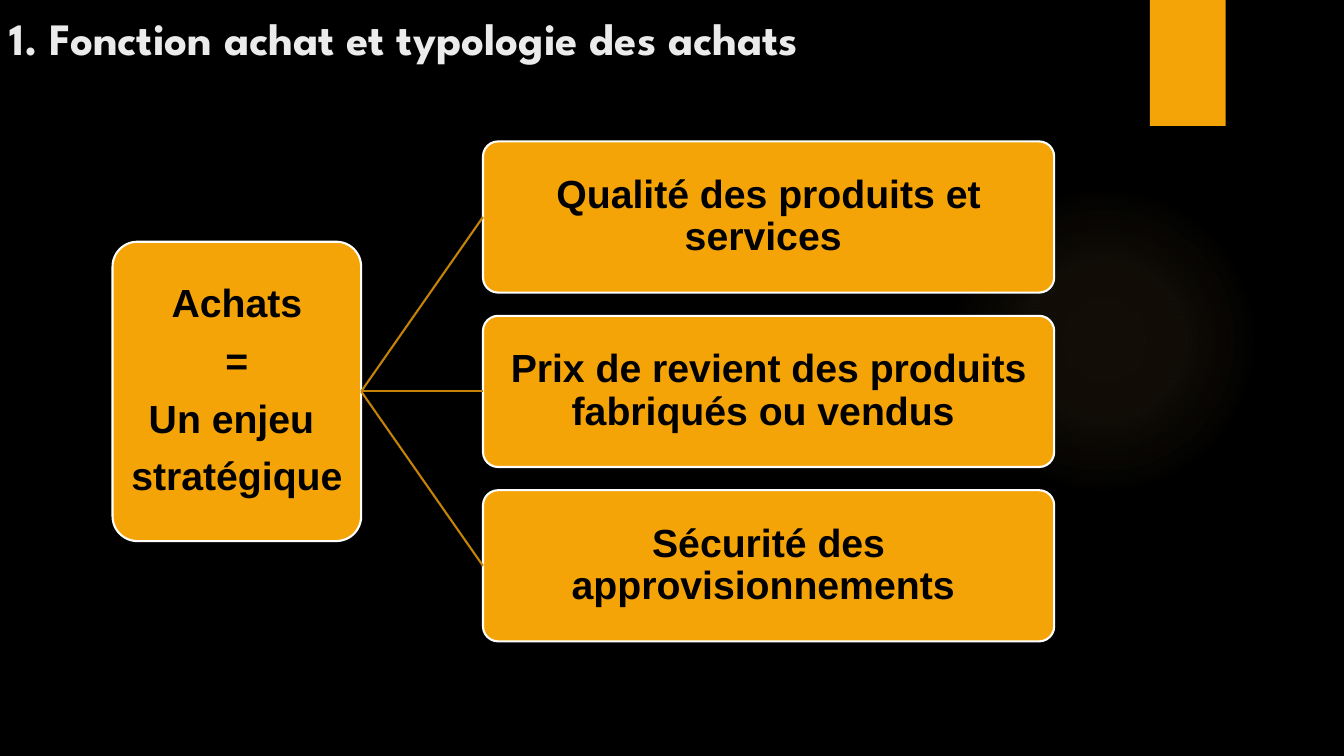
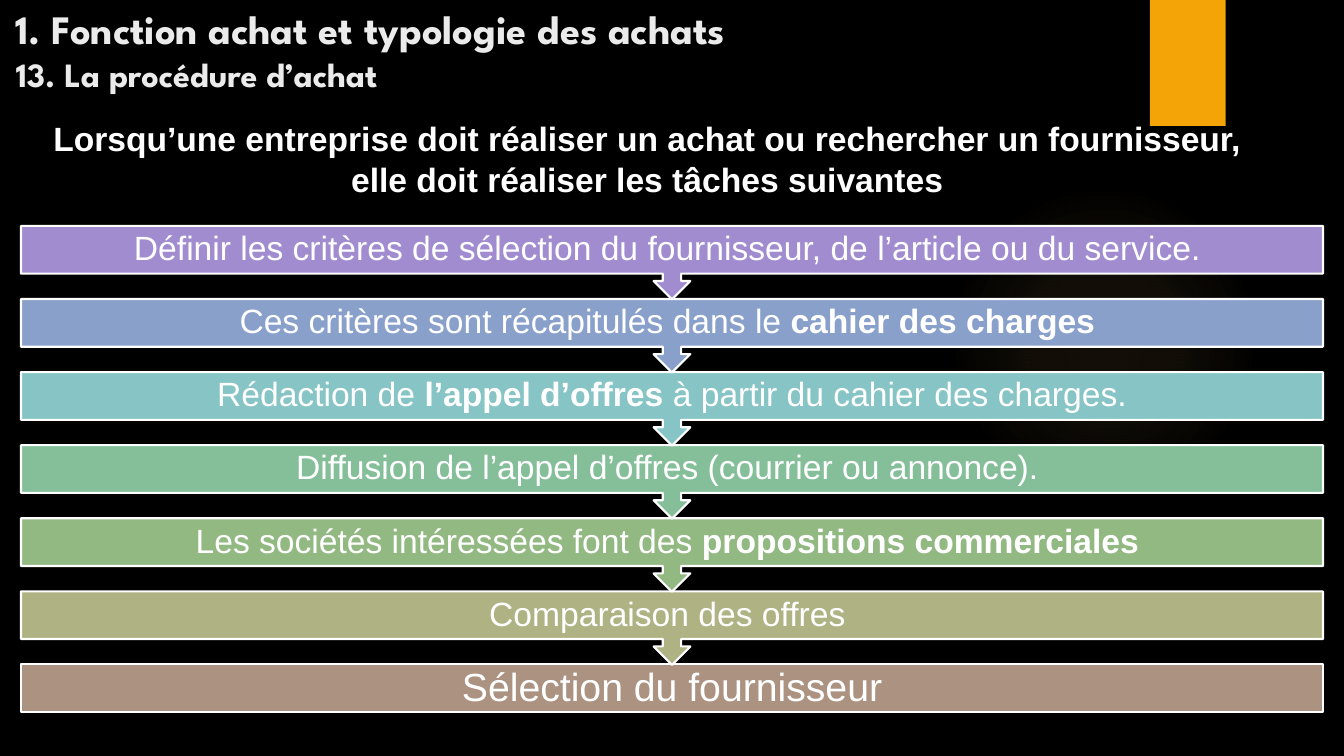
import pptx
import pptx.dml.color
import pptx.enum.shapes
import pptx.enum.text
import pptx.oxml
import pptx.oxml.ns
import pptx.util

COLUMNS, ROWS = 160, 90
COLORS = {
    "background": "000000", "accent": "F5A408", "glow": "FAC96A", "link": "C48306",
    "title": "EBEBEB", "light": "FFFFFF", "dark": "000000",
    "violet": "A18CD0", "blue": "89A0CB", "cyan": "87C4C5", "green": "85BF9A",
    "leaf": "93B983", "olive": "AFB282", "brown": "AB9281",
}
TITLE_FONT, BODY_FONT = "League Spartan", "Arial"
SHAPES = pptx.enum.shapes.MSO_SHAPE
ANCHORS = pptx.enum.text.MSO_ANCHOR
ALIGNMENTS = pptx.enum.text.PP_ALIGN


def color(name):
    return pptx.dml.color.RGBColor.from_string(COLORS[name])


def write_text(frame, paragraphs, size=24, font=BODY_FONT, ink="light", bold=False,
               align=ALIGNMENTS.CENTER, anchor=ANCHORS.MIDDLE, line_spacing=None,
               gap=0, insets=(0.1, 0.05)):
    """Fill a frame; each paragraph is a string or a list of (text, format) runs."""
    frame.word_wrap = True
    frame.vertical_anchor = anchor
    frame.margin_left = frame.margin_right = pptx.util.Inches(insets[0])
    frame.margin_top = frame.margin_bottom = pptx.util.Inches(insets[1])
    for index, runs in enumerate(paragraphs):
        paragraph = frame.add_paragraph() if index else frame.paragraphs[0]
        paragraph.alignment = align
        paragraph.line_spacing = line_spacing
        if index:
            paragraph.space_before = pptx.util.Pt(gap)
        for text, changes in [(runs, {})] if isinstance(runs, str) else runs:
            run = paragraph.add_run()
            run.text = text
            run.font.name = font
            run.font.size = pptx.util.Pt(changes.get("size", size))
            run.font.bold = changes.get("bold", bold)
            run.font.color.rgb = color(ink)


class Deck:
    """Holds the shared style and the current slide; lengths are grid units."""

    def __init__(self):
        self.presentation = pptx.Presentation()
        self.presentation.slide_width = pptx.util.Inches(13.33)
        self.presentation.slide_height = pptx.util.Inches(7.5)
        self.slide = None

    def place(self, left, top, width, height):
        column = self.presentation.slide_width / COLUMNS
        row = self.presentation.slide_height / ROWS
        return [round(value) for value in
                (left * column, top * row, width * column, height * row)]

    def add_slide(self):
        self.slide = self.presentation.slides.add_slide(self.presentation.slide_layouts[6])
        fill = self.slide.background.fill
        fill.solid()
        fill.fore_color.rgb = color("background")
        self.glow(112.9, 22, 37)
        self.box(SHAPES.RECTANGLE, 136.9, 0, 9, 15, outline=None)

    def box(self, kind, left, top, width, height, fill="accent", outline="light"):
        shape = self.slide.shapes.add_shape(kind, *self.place(left, top, width, height))
        shape.shadow.inherit = False
        shape.fill.solid()
        shape.fill.fore_color.rgb = color(fill)
        if outline:
            shape.line.color.rgb = color(outline)
            shape.line.width = pptx.util.Pt(1.5)
        else:
            shape.line.fill.background()
        return shape

    def glow(self, left, top, size):
        shape = self.box(SHAPES.OVAL, left, top, size, size, "glow", None)
        # Radial gradient fading to transparent (position and opacity in percent)
        stops = "".join(
            f'<a:gs pos="{position * 1000}"><a:srgbClr val="{COLORS["glow"]}">'
            f'<a:alpha val="{opacity * 1000}"/></a:srgbClr></a:gs>'
            for position, opacity in ((0, 7), (36, 6), (69, 0)))
        gradient = pptx.oxml.parse_xml(
            f'<a:gradFill {pptx.oxml.ns.nsdecls("a")}><a:gsLst>{stops}</a:gsLst>'
            '<a:path path="circle"><a:fillToRect l="50000" t="50000" r="50000" b="50000"/>'
            '</a:path></a:gradFill>')
        properties = shape.element.spPr
        properties.replace(properties.find(pptx.oxml.ns.qn("a:solidFill")), gradient)

    def text(self, left, top, width, height, paragraphs, **style):
        shape = self.slide.shapes.add_textbox(*self.place(left, top, width, height))
        write_text(shape.text_frame, paragraphs, **style)

    def title(self, left, height, paragraphs, size):
        self.text(left, 0, 115.8, height, paragraphs, size=size, font=TITLE_FONT,
                  ink="title", bold=True, align=ALIGNMENTS.LEFT, anchor=ANCHORS.BOTTOM)

    def card(self, left, middle, width, height, paragraphs):
        shape = self.box(SHAPES.ROUNDED_RECTANGLE, left, middle - height / 2, width, height)
        shape.adjustments[0] = 0.1
        write_text(shape.text_frame, paragraphs, size=28, ink="dark", bold=True,
                   line_spacing=0.9, gap=11, insets=(0.02, 0.02))
        return shape

    def link(self, start, end):
        line = self.slide.shapes.add_connector(
            pptx.enum.shapes.MSO_CONNECTOR.STRAIGHT, 0, 0, 0, 0)
        line.begin_connect(start, 3)
        line.end_connect(end, 1)
        line.line.color.rgb = color("link")
        line.line.width = pptx.util.Pt(1.5)
        line.element.spPr.append(
            pptx.oxml.parse_xml(f'<a:effectLst {pptx.oxml.ns.nsdecls("a")}/>'))

    def step(self, top, paragraph, fill, last=False):
        kind = SHAPES.RECTANGLE if last else SHAPES.DOWN_ARROW_CALLOUT
        shape = self.box(kind, 2.5, top, 155, 5.7 if last else 8.75, fill)
        write_text(shape.text_frame, [paragraph], size=28 if last else 24,
                   line_spacing=0.9, insets=(0.19, 0))


def build_stakes(deck):
    deck.add_slide()
    deck.title(0, 8.3, ["1. Fonction achat et typologie des achats"], 32)
    # Root card joined to three stakes
    middle, pitch = 46.6, 20.76
    root = deck.card(13.4, middle, 29.6, 35.64,
                     ["Achats", "=", "Un enjeu ", "stratégique"])
    stakes = ["Qualité des produits et services ",
              "Prix de revient des produits fabriqués ou vendus ",
              "Sécurité des approvisionnements "]
    for index, stake in enumerate(stakes):
        deck.link(root, deck.card(57.5, middle + (index - 1) * pitch, 68, 18, [stake]))


def build_procedure(deck):
    deck.add_slide()
    deck.title(0.7, 11.76, ["1. Fonction achat et typologie des achats",
                            [("13. La procédure d’achat", {"size": 24.3})]], 28.8)
    deck.text(1.5, 13.5, 151.1, 10.9,
              ["Lorsqu’une entreprise doit réaliser un achat ou rechercher un fournisseur, "
               "elle doit réaliser les tâches suivantes"],
              bold=True, anchor=ANCHORS.TOP)
    # Steps, drawn from the last so each arrow tip lies over the next bar
    strong = {"bold": True}
    steps = [
        ("Définir les critères de sélection du fournisseur, de l’article ou du service. ",
         "violet"),
        ([("Ces critères sont récapitulés dans le ", {}), ("cahier des charges ", strong)],
         "blue"),
        ([("Rédaction de ", {}), ("l’appel d’offres ", strong),
          ("à partir du cahier des charges.", {})], "cyan"),
        ("Diffusion de l’appel d’offres (courrier ou annonce). ", "green"),
        ([("Les sociétés intéressées font des ", {}),
          ("propositions commerciales ", strong)], "leaf"),
        ("Comparaison des offres ", "olive"),
        ("Sélection du fournisseur", "brown"),
    ]
    for index, (paragraph, fill) in reversed(list(enumerate(steps))):
        deck.step(26.9 + index * 8.7, paragraph, fill, last=index == len(steps) - 1)


def main():
    deck = Deck()
    build_stakes(deck)
    build_procedure(deck)
    deck.presentation.save("out.pptx")


if __name__ == "__main__":
    main()
